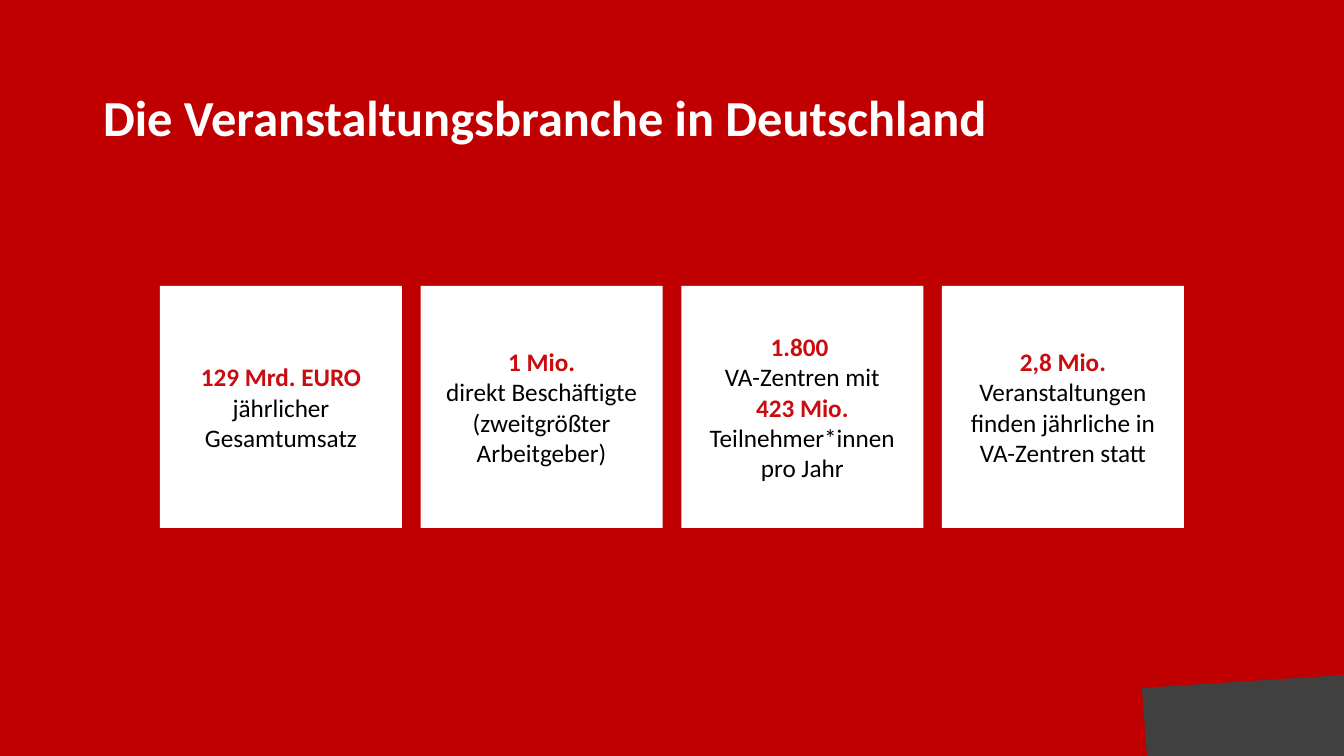
from dataclasses import dataclass

from pptx import Presentation
from pptx.dml.color import RGBColor
from pptx.enum.shapes import MSO_SHAPE
from pptx.enum.text import MSO_ANCHOR, MSO_AUTO_SIZE, PP_ALIGN
from pptx.util import Pt

RECTANGLE = MSO_SHAPE.RECTANGLE
TOP, MIDDLE = MSO_ANCHOR.TOP, MSO_ANCHOR.MIDDLE
LEFT, CENTER = PP_ALIGN.LEFT, PP_ALIGN.CENTER
NO_AUTOFIT = MSO_AUTO_SIZE.NONE

# Content: each card is a list of paragraphs, each paragraph a list of runs
TITLE = "Die Veranstaltungsbranche in Deutschland"
CARDS = [
    [[("129 Mrd. EURO ", "figure"), ("jährlicher Gesamtumsatz", "plain")]],
    [[("1 Mio", "figure"), (".", "point")],
     [("direkt Beschäftigte\n(zweitgrößter Arbeitgeber)", "plain")]],
    [[("1.800 ", "figure")],
     [("VA-Zentren mit\n", "plain"), ("423 Mio. ", "figure"),
      ("Teilnehmer*innen pro Jahr", "plain")]],
    [[("2,8 Mio. ", "figure"),
      ("Veranstaltungen finden jährliche in VA-Zentren statt", "plain")]],
]


@dataclass(frozen=True)
class Theme:
    font: str = "Calibri"
    title_size: int = 36
    card_size: int = 18
    red: str = "C00000"
    figure_red: str = "C90C0F"
    white: str = "FFFFFF"
    black: str = "000000"
    gray: str = "404040"


THEME = Theme()
RUN_STYLES = {  # colour, bold
    "figure": (THEME.figure_red, True),
    "point": (THEME.red, True),
    "plain": (THEME.black, False),
}

# Layout in px
SLIDE_WIDTH, SLIDE_HEIGHT = 1344, 756
TITLE_BOX = (93, 88, 991, 80)
CARD_SIZE, CARD_TOP, CARD_MARGIN = 242, 286, 160
CORNER = [(1142, 688), (1344, 675), (1344, 756), (1147, 756)]
EMU_PER_PX = 12192000 / SLIDE_WIDTH


def emu(px):
    return round(px * EMU_PER_PX)


def paint(fill, color):
    fill.solid()
    fill.fore_color.rgb = RGBColor.from_string(color)


def add_run(paragraph, text, size, color, bold):
    run = paragraph.add_run()
    run.text = text
    run.font.name = THEME.font
    run.font.size = Pt(size)
    run.font.bold = bold
    run.font.color.rgb = RGBColor.from_string(color)


def add_title(slide):
    title = slide.shapes.title
    title.left, title.top, title.width, title.height = map(emu, TITLE_BOX)
    frame = title.text_frame
    frame.auto_size = NO_AUTOFIT
    frame.word_wrap = True
    frame.vertical_anchor = TOP
    paragraph = frame.paragraphs[0]
    paragraph.alignment = LEFT
    paragraph.line_spacing = 0.9
    paragraph.space_before = Pt(0)
    add_run(paragraph, TITLE, THEME.title_size, THEME.white, True)


def add_card(slide, left, paragraphs):
    card = slide.shapes.add_shape(
        RECTANGLE, emu(left), emu(CARD_TOP), emu(CARD_SIZE), emu(CARD_SIZE))
    card.shadow.inherit = False
    paint(card.fill, THEME.white)
    card.line.fill.background()
    frame = card.text_frame
    frame.word_wrap = True
    frame.vertical_anchor = MIDDLE
    for index, runs in enumerate(paragraphs):
        paragraph = frame.add_paragraph() if index else frame.paragraphs[0]
        paragraph.alignment = CENTER
        for text, style in runs:
            for number, line in enumerate(text.split("\n")):
                if number:
                    paragraph.add_line_break()
                if line:
                    add_run(paragraph, line, THEME.card_size, *RUN_STYLES[style])


def add_corner(slide):
    start, *others = CORNER
    builder = slide.shapes.build_freeform(*start, scale=EMU_PER_PX)
    builder.add_line_segments(others, close=True)
    corner = builder.convert_to_shape()
    corner.shadow.inherit = False
    paint(corner.fill, THEME.gray)
    corner.line.fill.background()


def main():
    presentation = Presentation()
    presentation.slide_width = emu(SLIDE_WIDTH)
    presentation.slide_height = emu(SLIDE_HEIGHT)
    title_only = presentation.slide_layouts[5]
    slide = presentation.slides.add_slide(title_only)
    paint(slide.background.fill, THEME.red)

    add_corner(slide)
    add_title(slide)

    # Cards spread evenly between the two margins
    pitch = (SLIDE_WIDTH - 2 * CARD_MARGIN - CARD_SIZE) / (len(CARDS) - 1)
    for column, paragraphs in enumerate(CARDS):
        add_card(slide, CARD_MARGIN + column * pitch, paragraphs)

    presentation.save("out.pptx")


if __name__ == "__main__":
    main()
